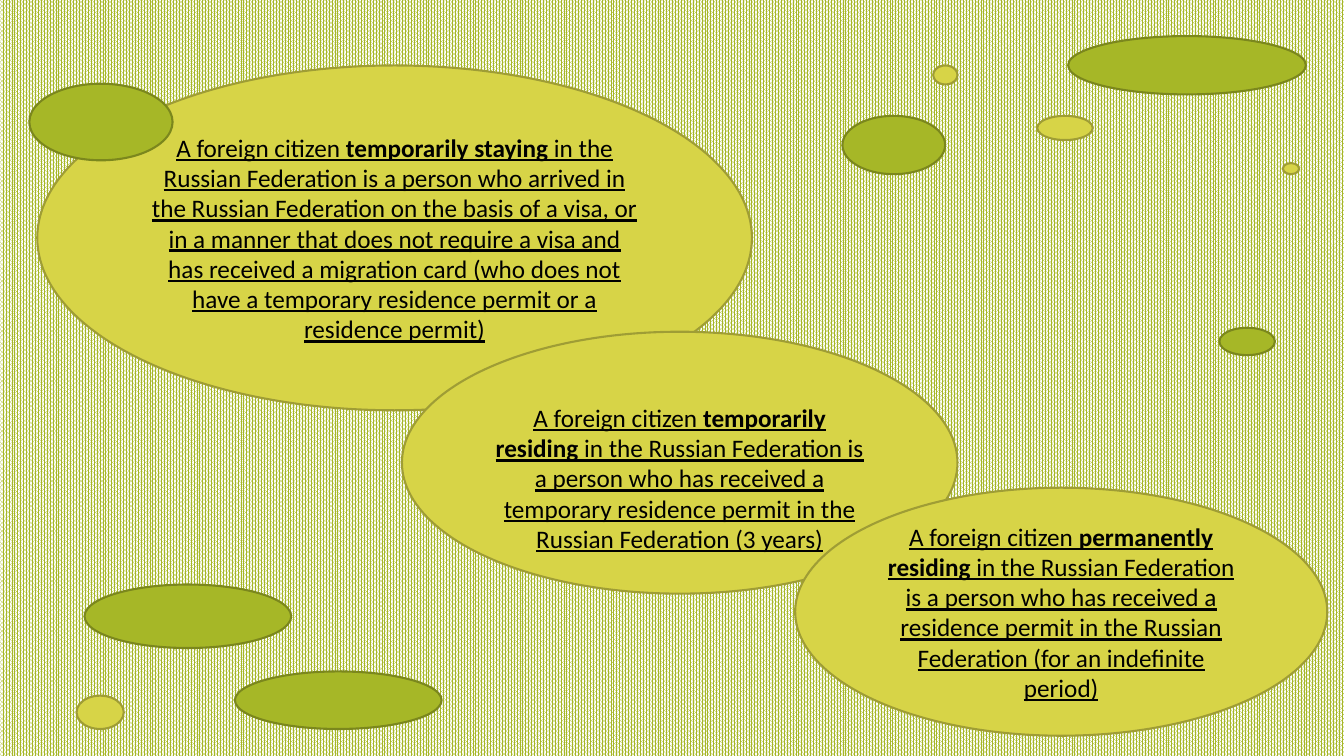
from pptx import Presentation
from pptx.dml.color import RGBColor
from pptx.enum.dml import MSO_PATTERN
from pptx.enum.shapes import MSO_SHAPE
from pptx.enum.text import MSO_ANCHOR, PP_ALIGN
from pptx.util import Cm, Pt

COLORS = {
    "green": "A6B727",
    "green line": "7B871D",
    "yellow": "D7D447",
    "yellow line": "9F9D35",
    "text": "000000",
    "white": "FFFFFF",
}

DEFINITIONS = [
    ((0.94, 1.65, 18.01, 8.69), 0.13, [
        ("A foreign citizen ", False),
        ("temporarily staying ", True),
        ("in the Russian Federation is a person who arrived in the Russian "
         "Federation on the basis of a visa, or in a manner that does not "
         "require a visa and has received a migration card (who does not have "
         "a temporary residence permit or a residence permit)", False),
    ]),
    ((10.13, 8.36, 14, 6.6), 0.89, [
        ("A foreign citizen ", False),
        ("temporarily residing", True),
        (" in the Russian Federation is a person who has received a temporary "
         "residence permit in the Russian Federation (3 years)", False),
    ]),
    ((20.04, 12.29, 13.41, 6.25), 0.13, [
        ("A foreign citizen ", False),
        ("permanently residing ", True),
        ("in the Russian Federation is a person who has received a residence "
         "permit in the Russian Federation (for an indefinite period)", False),
    ]),
]

BUBBLES = [
    ("green", (21.23, 2.92, 2.59, 1.47)),
    ("green", (26.92, 0.91, 5.99, 1.47)),
    ("yellow", (26.14, 2.92, 1.4, 0.61)),
    ("green", (30.73, 8.26, 1.4, 0.69)),
    ("yellow", (32.33, 4.11, 0.41, 0.28)),
    ("yellow", (23.52, 1.65, 0.61, 0.48)),
    ("green", (2.13, 14.73, 5.21, 1.6)),
    ("green", (5.92, 16.92, 5.21, 1.45)),
    ("yellow", (1.93, 17.53, 1.19, 0.84)),
    ("green", (0.74, 2.11, 3.61, 1.93)),
]


def color(name):
    return RGBColor.from_string(COLORS[name])


def apply_format(target, values):
    for name, value in values.items():
        setattr(target, name, value)


class BubbleSlide:
    font_format = {"name": "Calibri", "size": Pt(18), "underline": True}
    frame_format = {"word_wrap": True, "vertical_anchor": MSO_ANCHOR.MIDDLE}

    def __init__(self, presentation):
        self.slide = presentation.slides.add_slide(presentation.slide_layouts[6])

    def add_background(self):
        fill = self.slide.background.fill
        fill.patterned()
        fill.pattern = MSO_PATTERN.PERCENT_80
        fill.fore_color.rgb = color("green")
        fill.back_color.rgb = color("white")

    def add_bubble(self, tone, box):
        shape = self.slide.shapes.add_shape(MSO_SHAPE.OVAL, *map(Cm, box))
        shape.shadow.inherit = False
        shape.fill.solid()
        shape.fill.fore_color.rgb = color(tone)
        shape.line.color.rgb = color(f"{tone} line")
        shape.line.width = Pt(1.5)
        return shape

    def add_definition(self, box, top_margin, parts):
        frame = self.add_bubble("yellow", box).text_frame
        apply_format(frame, {**self.frame_format, "margin_top": Cm(top_margin)})
        paragraph = frame.paragraphs[0]
        paragraph.alignment = PP_ALIGN.CENTER
        for text, bold in parts:
            run = paragraph.add_run()
            run.text = text
            apply_format(run.font, {**self.font_format, "bold": bold})
            run.font.color.rgb = color("text")


def main():
    presentation = Presentation()
    apply_format(presentation, {"slide_width": Cm(33.87), "slide_height": Cm(19.05)})
    bubble_slide = BubbleSlide(presentation)
    bubble_slide.add_background()
    for box, top_margin, parts in DEFINITIONS:
        bubble_slide.add_definition(box, top_margin, parts)
    for tone, box in BUBBLES:
        bubble_slide.add_bubble(tone, box)
    presentation.save("out.pptx")


if __name__ == "__main__":
    main()
